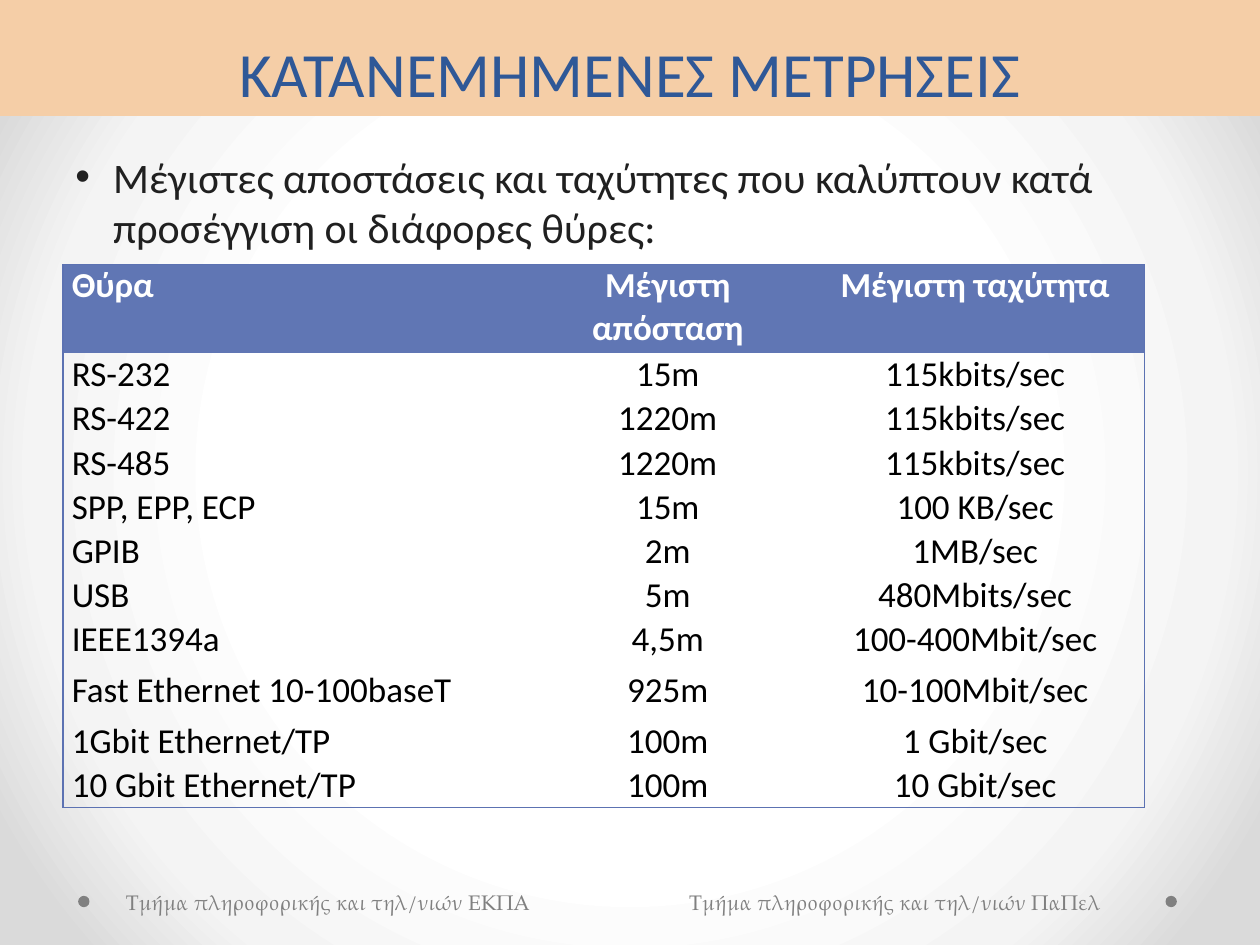
from lxml import etree
from pptx import Presentation
from pptx.dml.color import RGBColor
from pptx.enum import shapes, text
from pptx.oxml import parse_xml
from pptx.oxml.ns import nsdecls, qn
from pptx.util import Inches, Pt

COLORS = {
    "band": "F5CEA7", "title": "2F5897", "body": "202020", "muted": "808080",
    "header": "6076B4", "border": "5C72B2", "white": "FFFFFF", "black": "000000",
}
BACKDROP = [(50, "FFFFFF"), (76, "F4F4F4"), (92, "DADADA")]
NO_STYLE = "{2D5ABB26-0587-4C30-8999-92F81FD0307C}"
PORTS = [
    ("Θύρα", "Μέγιστη απόσταση", "Μέγιστη ταχύτητα"),
    ("RS-232", "15m", "115kbits/sec"),
    ("RS-422", "1220m", "115kbits/sec"),
    ("RS-485", "1220m", "115kbits/sec"),
    ("SPP, EPP, ECP", "15m", "100 KB/sec"),
    ("GPIB", "2m", "1MB/sec"),
    ("USB", "5m", "480Mbits/sec"),
    ("IEEE1394a", "4,5m", "100-400Mbit/sec"),
    ("Fast Ethernet 10-100baseT", "925m", "10-100Mbit/sec"),
    ("1Gbit Ethernet/TP", "100m", "1 Gbit/sec"),
    ("10 Gbit Ethernet/TP", "100m", "10 Gbit/sec"),
]


def rgb(name):
    return RGBColor.from_string(COLORS[name])


def write(tf, words, size, color, font="Calibri", bold=False, align=text.PP_ALIGN.LEFT):
    tf.text = words
    p = tf.paragraphs[0]
    p.alignment = align
    f = p.runs[0].font
    f.name, f.size, f.bold = font, Pt(size), bold
    f.color.rgb = rgb(color)
    return p


def add_filled(s, kind, box, color):
    sp = s.shapes.add_shape(kind, *map(Inches, box))
    sp.shadow.inherit = False
    sp.fill.solid()
    sp.fill.fore_color.rgb = rgb(color)
    sp.line.fill.background()
    return sp


def add_text(s, box):
    tf = s.shapes.add_textbox(*map(Inches, box)).text_frame
    tf.word_wrap = True
    return tf


def set_background(s):
    stops = "".join(
        f'<a:gs pos="{pos * 1000}"><a:srgbClr val="{color}"/></a:gs>'
        for pos, color in BACKDROP)
    bg = parse_xml(
        f'<p:bg {nsdecls("p", "a")}><p:bgPr><a:gradFill rotWithShape="1">'
        f'<a:gsLst>{stops}</a:gsLst><a:path path="circle">'
        '<a:fillToRect l="50000" t="50000" r="50000" b="50000"/></a:path>'
        '</a:gradFill><a:effectLst/></p:bgPr></p:bg>')
    s.element.cSld.insert(0, bg)


def add_footer(s, x, y, w):
    # Dots at both ends, one department beside each
    dot = 0.09
    for left in (x, x + w - dot):
        add_filled(s, shapes.MSO_SHAPE.OVAL, (left, y + 0.1, dot, dot), "muted")
    for dx, width, words in ((0.28, 3.94, "Τμήμα πληροφορικής και τηλ/νιών ΕΚΠΑ"),
                             (4.75, 3.58, "Τμήμα πληροφορικής και τηλ/νιών ΠαΠελ")):
        write(add_text(s, (x + dx, y, width, 0.3)), words, 12, "muted", "TeX Gyre Pagella")


def add_title(s, box):
    tf = add_filled(s, shapes.MSO_SHAPE.RECTANGLE, box, "band").text_frame
    tf.word_wrap = True
    tf.vertical_anchor = text.MSO_ANCHOR.BOTTOM
    p = write(tf, "ΚΑΤΑΝΕΜΗΜΕΝΕΣ ΜΕΤΡΗΣΕΙΣ", 36, "title", align=text.PP_ALIGN.CENTER)
    p.line_spacing = Pt(58)


def add_intro(s, box):
    p = write(add_text(s, box),
              "Μέγιστες αποστάσεις και ταχύτητες που καλύπτουν κατά "
              "προσέγγιση οι διάφορες θύρες:", 24, "body")
    pPr = p._p.get_or_add_pPr()
    pPr.set("marL", str(Inches(0.3)))
    pPr.set("indent", str(Inches(-0.3)))
    etree.SubElement(pPr, qn("a:buFont")).set("typeface", "Arial")
    etree.SubElement(pPr, qn("a:buChar")).set("char", "•")


def add_borders(cell, sides):
    tcPr = cell._tc.get_or_add_tcPr()
    for side in sides:
        tcPr.append(parse_xml(
            f'<a:ln{side} {nsdecls("a")} w="{Pt(0.75)}"><a:solidFill>'
            f'<a:srgbClr val="{COLORS["border"]}"/></a:solidFill></a:ln{side}>'))


def add_ports_table(s, box):
    widths = [3.7, 2.2, 2.68]
    heights = [0.7] + [0.35] * 7 + [0.46] + [0.35] * 2
    last_row, last_col = len(PORTS) - 1, len(widths) - 1
    frame = s.shapes.add_table(len(PORTS), len(widths), *map(Inches, box))
    table = frame.table
    table.first_row = table.horz_banding = False
    table._tbl.tblPr.find(qn("a:tableStyleId")).text = NO_STYLE
    for column, width in zip(table.columns, widths):
        column.width = Inches(width)
    for i, (row, height) in enumerate(zip(table.rows, heights)):
        row.height = Inches(height)
        for j, cell in enumerate(row.cells):
            head = i == 0
            cell.margin_left = cell.margin_right = Inches(0.07)
            cell.margin_top = cell.margin_bottom = 0
            cell.vertical_anchor = text.MSO_ANCHOR.TOP if head else text.MSO_ANCHOR.MIDDLE
            write(cell.text_frame, PORTS[i][j], 20, "white" if head else "black", bold=head,
                  align=text.PP_ALIGN.CENTER if j else text.PP_ALIGN.LEFT)
            # Only the outer edge of the table is ruled
            edges = {"L": j == 0, "R": j == last_col, "T": head, "B": i == last_row}
            add_borders(cell, [side for side, outer in edges.items() if outer])
            if head:
                cell.fill.solid()
                cell.fill.fore_color.rgb = rgb("header")
            else:
                cell.fill.background()


def main():
    prs = Presentation()
    prs.slide_width, prs.slide_height = Inches(10), Inches(7.5)
    s = prs.slides.add_slide(prs.slide_layouts[6])
    set_background(s)
    add_footer(s, 0.62, 7.01, 8.72)
    add_title(s, (0, 0, 10, 0.92))
    add_intro(s, (0.5, 1.15, 9, 0.94))
    add_ports_table(s, (0.5, 2.1, 8.58, 4.33))
    prs.save("out.pptx")


if __name__ == "__main__":
    main()
